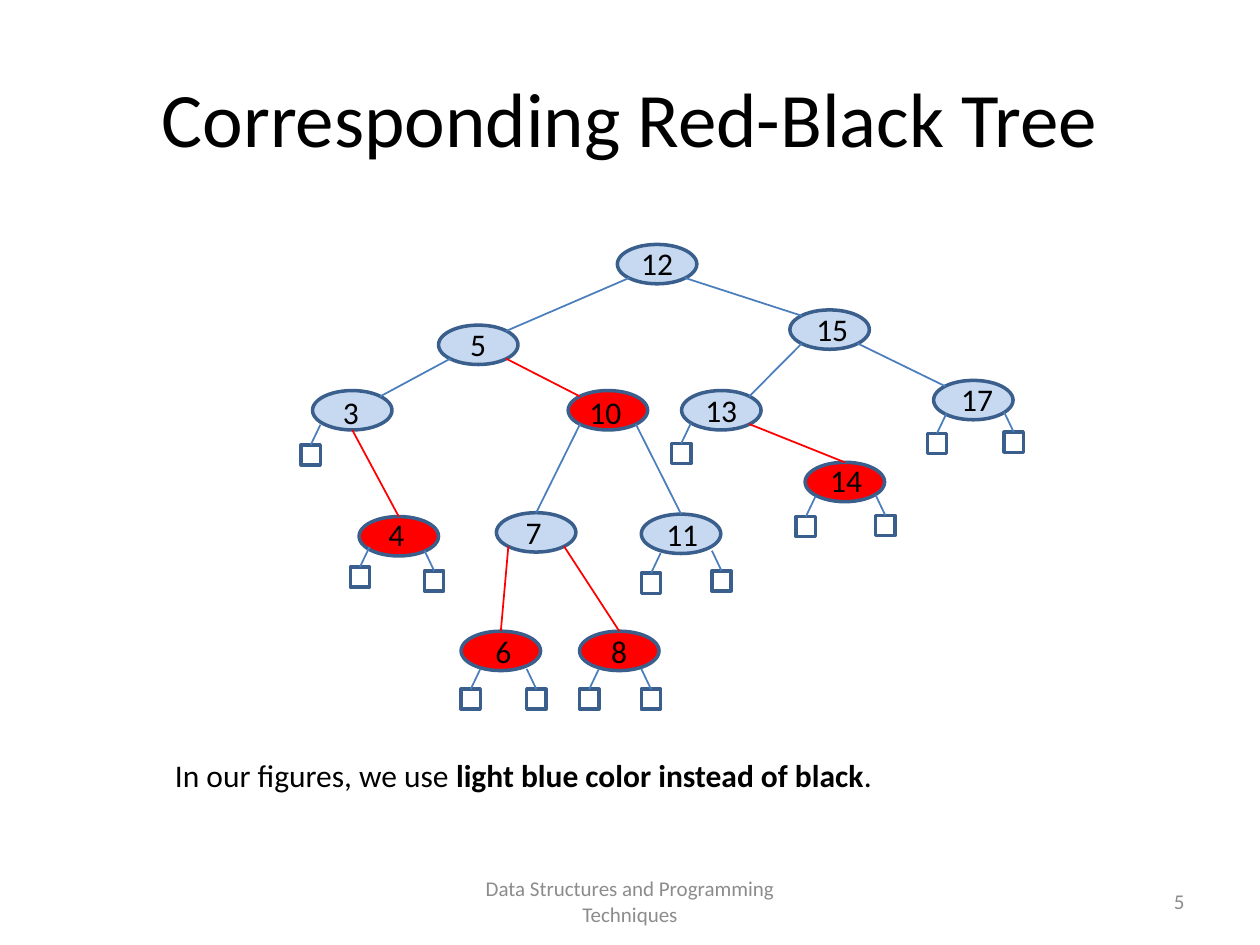
from dataclasses import dataclass
from typing import NamedTuple, Optional

from lxml.etree import SubElement
from pptx import Presentation
from pptx.dml.color import RGBColor
from pptx.enum.shapes import MSO_CONNECTOR as Connector, MSO_SHAPE as Shape
from pptx.enum.text import MSO_ANCHOR as Anchor, PP_ALIGN as Align
from pptx.oxml.ns import qn
from pptx.util import Pt


@dataclass(frozen=True)
class Theme:
    font: str = "Calibri"
    text: str = "000000"
    muted: str = "8C8C8C"
    red: str = "FF0000"
    light_blue: str = "C6D9F1"
    outline: str = "3A5F8C"
    edge: str = "4B7EBC"
    title_size: int = 44
    body_size: int = 18
    footer_size: int = 12


THEME = Theme()
NODE_WIDTH, NODE_HEIGHT = 45.4, 22.5
LEAF_WIDTH, LEAF_HEIGHT = 11, 11.5
# Where edges touch an ellipse, as fractions of its width and height
SITES = {"top": (0.5, 0), "bottom": (0.5, 1),
         "top left": (0.15, 0.15), "top right": (0.85, 0.15),
         "bottom left": (0.15, 0.85), "bottom right": (0.85, 0.85)}


class Node(NamedTuple):
    left: float
    top: float
    label_shift: tuple
    red: bool = False
    left_leaf: Optional[tuple] = None
    right_leaf: Optional[tuple] = None


NODES = {
    12: Node(352.8, 139.7, (5, -3.6)),
    5: Node(250.6, 185.8, (5, -3.6)),
    15: Node(451.4, 177.1, (6.5, -3.6)),
    3: Node(178.6, 223.2, (4.3, -2.2), left_leaf=(172.1, 254.2)),
    10: Node(324.7, 223.2, (3.6, -2.2), red=True),
    13: Node(389.5, 223.2, (5, -3.6), left_leaf=(383.8, 253.4)),
    17: Node(533.5, 217.4, (7.2, -3.6), False, (529.9, 247.7), (573.8, 247)),
    4: Node(205.2, 295.2, (3.6, -4.3), True, (200.2, 324), (242.6, 326.2)),
    7: Node(283.7, 293, (3.6, -3.6)),
    11: Node(366.5, 293.8, (5.7, -2.9), False, (366.5, 327.6), (406.8, 326.2)),
    14: Node(460.1, 264.2, (5.7, -4.3), True, (455, 295.2), (500.4, 294.5)),
    6: Node(263.5, 360.7, (6.5, -2.9), True, (263.5, 393.8), (301, 393.8)),
    8: Node(331.2, 360.7, (5, -2.9), True, (331.2, 393.8), (366.5, 393.8)),
}

# Parent, its site, child, its site
EDGES = [
    (12, "bottom left", 5, "top right"),
    (12, "bottom right", 15, "top left"),
    (5, "bottom left", 3, "top right"),
    (5, "bottom right", 10, "top left"),
    (15, "bottom left", 13, "top right"),
    (15, "bottom right", 17, "top left"),
    (3, "bottom", 4, "top"),
    (10, "bottom left", 7, "top"),
    (10, "bottom right", 11, "top"),
    (13, "bottom right", 14, "top"),
    (7, "bottom left", 6, "top"),
    (7, "bottom right", 8, "top"),
]


def color(value):
    return RGBColor.from_string(value)


def add_run(paragraph, text, size, text_color=THEME.text, bold=False):
    run = paragraph.add_run()
    run.text = text
    run.font.name = THEME.font
    run.font.size = Pt(size)
    run.font.bold = bold
    run.font.color.rgb = color(text_color)


def add_text_box(slide, left, top, width, height, align, anchor=Anchor.TOP):
    """Add an empty wrapping text box and return its paragraph."""
    frame = slide.shapes.add_textbox(Pt(left), Pt(top), Pt(width), Pt(height)).text_frame
    frame.word_wrap = True
    frame.vertical_anchor = anchor
    paragraph = frame.paragraphs[0]
    paragraph.alignment = align
    return paragraph


def add_outlined(slide, kind, left, top, width, height, fill=None):
    shape = slide.shapes.add_shape(kind, Pt(left), Pt(top), Pt(width), Pt(height))
    shape.shadow.inherit = False
    if fill:
        shape.fill.solid()
        shape.fill.fore_color.rgb = color(fill)
    else:
        shape.fill.background()
    shape.line.color.rgb = color(THEME.outline)
    shape.line.width = Pt(2)


def add_line(slide, start, end, line_color=THEME.edge):
    line = slide.shapes.add_connector(Connector.STRAIGHT, *map(Pt, start + end))
    line.line.color.rgb = color(line_color)
    line.line.width = Pt(1)
    SubElement(line._element.spPr, qn("a:effectLst"))


def site_point(node, site):
    across, down = SITES[site]
    return node.left + across * NODE_WIDTH, node.top + down * NODE_HEIGHT


def add_edge(slide, parent, parent_site, child, child_site):
    add_line(slide, site_point(NODES[parent], parent_site),
             site_point(NODES[child], child_site),
             THEME.red if NODES[child].red else THEME.edge)


def add_leaf(slide, left, top, is_left):
    """Add an external node, hung from the corner nearer its parent."""
    add_outlined(slide, Shape.RECTANGLE, left, top, LEAF_WIDTH, LEAF_HEIGHT)
    start_x = left + LEAF_WIDTH if is_left else left
    add_line(slide, (start_x, top - LEAF_HEIGHT), (left + LEAF_WIDTH / 2, top))


def add_node(slide, key, node):
    add_outlined(slide, Shape.OVAL, node.left, node.top, NODE_WIDTH, NODE_HEIGHT,
                 THEME.red if node.red else THEME.light_blue)
    shift_x, shift_y = node.label_shift
    label = add_text_box(slide, node.left + shift_x, node.top + shift_y,
                         35.3, 29, Align.CENTER)
    add_run(label, str(key), THEME.body_size)
    for leaf, is_left in ((node.left_leaf, True), (node.right_leaf, False)):
        if leaf:
            add_leaf(slide, *leaf, is_left)


def add_title(slide, text):
    title = slide.shapes.title
    title.left, title.top, title.width, title.height = map(Pt, (36, 21.6, 648, 90))
    title.text_frame.vertical_anchor = Anchor.MIDDLE
    paragraph = title.text_frame.paragraphs[0]
    paragraph.alignment = Align.CENTER
    add_run(paragraph, text, THEME.title_size)


def main():
    presentation = Presentation()
    presentation.slide_width, presentation.slide_height = Pt(720), Pt(540)
    slide = presentation.slides.add_slide(presentation.slide_layouts[5])
    add_title(slide, "Corresponding Red-Black Tree")

    # Tree
    for key, node in NODES.items():
        add_node(slide, key, node)
    for edge in EDGES:
        add_edge(slide, *edge)

    # Remark below the tree
    remark = add_text_box(slide, 92.9, 428.4, 465, 29, Align.LEFT)
    add_run(remark, "In our figures, we use ", THEME.body_size)
    add_run(remark, "light blue color instead of black", THEME.body_size, bold=True)
    add_run(remark, ".", THEME.body_size)

    # Footer and slide number
    footer = add_text_box(slide, 246, 500.5, 228, 28.8, Align.CENTER, Anchor.MIDDLE)
    add_run(footer, "Data Structures and Programming Techniques",
            THEME.footer_size, THEME.muted)
    number = add_text_box(slide, 516, 500.5, 168, 28.8, Align.RIGHT, Anchor.MIDDLE)
    add_run(number, "5", THEME.footer_size, THEME.muted)

    presentation.save("out.pptx")


if __name__ == "__main__":
    main()
